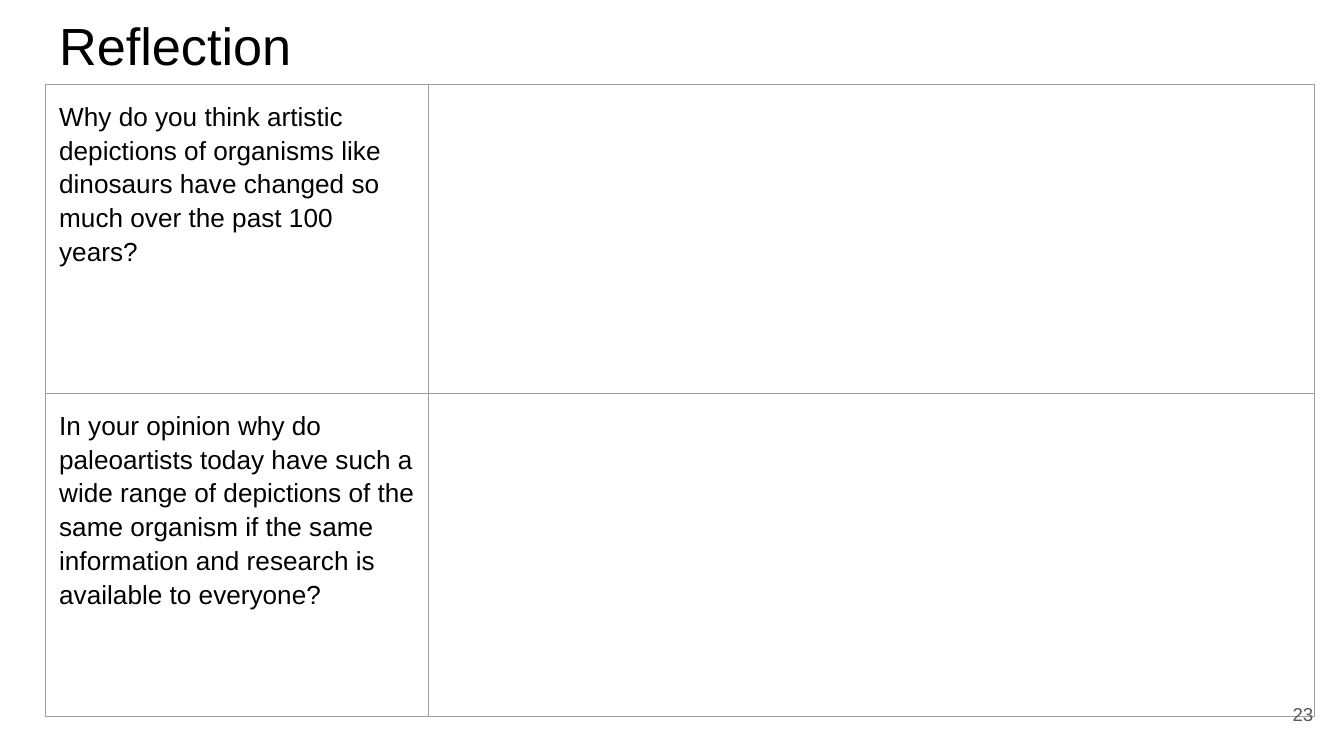
from lxml.etree import SubElement as Sub
from pptx import Presentation
from pptx.dml.color import RGBColor as RGB
from pptx.enum.text import MSO_ANCHOR as Anchor, PP_ALIGN as Align
from pptx.oxml.ns import qn
from pptx.util import Inches, Pt

INK = {"text": "000000", "rule": "9E9E9E", "page": "595959"}
ASKS = [
    "Why do you think artistic depictions of organisms like dinosaurs have changed so much over the past 100 years?",
    "In your opinion why do paleoartists today have such a wide range of depictions of the same organism if the same information and research is available to everyone?",
]
COLS = [2.85, 6.59]
ROWS = [2.3, 2.4]
LEFT, TOP = 0.34, 0.63
PAD = Inches(0.1)


def pad(box):
    box.margin_left = box.margin_right = PAD
    box.margin_top = box.margin_bottom = PAD


def style(para, text, size, ink, align=Align.LEFT):
    para.text = text
    para.alignment = align
    para.font.name = "Arial"
    para.font.size = Pt(size)
    para.font.color.rgb = RGB.from_string(INK[ink])


deck = Presentation()
deck.slide_width = Inches(10)
deck.slide_height = Inches(10) * 9 // 16
slide = deck.slides.add_slide(deck.slide_layouts[5])

title = slide.shapes.title
title.left, title.top = Inches(LEFT), 0
title.width, title.height = deck.slide_width - 2 * Inches(LEFT), Inches(TOP)
frame = title.text_frame
pad(frame)
frame.vertical_anchor = Anchor.TOP
style(frame.paragraphs[0], "Reflection", 28, "text")

grid = slide.shapes.add_table(
    len(ROWS), len(COLS), Inches(LEFT), Inches(TOP), Inches(sum(COLS)), Inches(sum(ROWS))
).table
grid.first_row = grid.horz_banding = False
for col, wide in zip(grid.columns, COLS):
    col.width = Inches(wide)
for row, high, ask in zip(grid.rows, ROWS, ASKS):
    row.height = Inches(high)
    for cell, text in zip(row.cells, [ask, ""]):
        pad(cell)
        para = cell.text_frame.paragraphs[0]
        style(para, text, 14, "text")
        para.line_spacing = 1.15
        props = cell._tc.get_or_add_tcPr()
        for side in ["lnL", "lnR", "lnT", "lnB"]:
            line = Sub(props, qn(f"a:{side}"), w=str(Pt(0.75)))
            fill = Sub(line, qn("a:solidFill"))
            Sub(fill, qn("a:srgbClr"), val=INK["rule"])
        cell.fill.background()

page = slide.shapes.add_textbox(Inches(9.27), Inches(5.1), Inches(0.6), Inches(0.43))
frame = page.text_frame
frame.word_wrap = True
frame.vertical_anchor = Anchor.MIDDLE
pad(frame)
style(frame.paragraphs[0], "23", 10, "page", Align.RIGHT)

deck.save("out.pptx")
